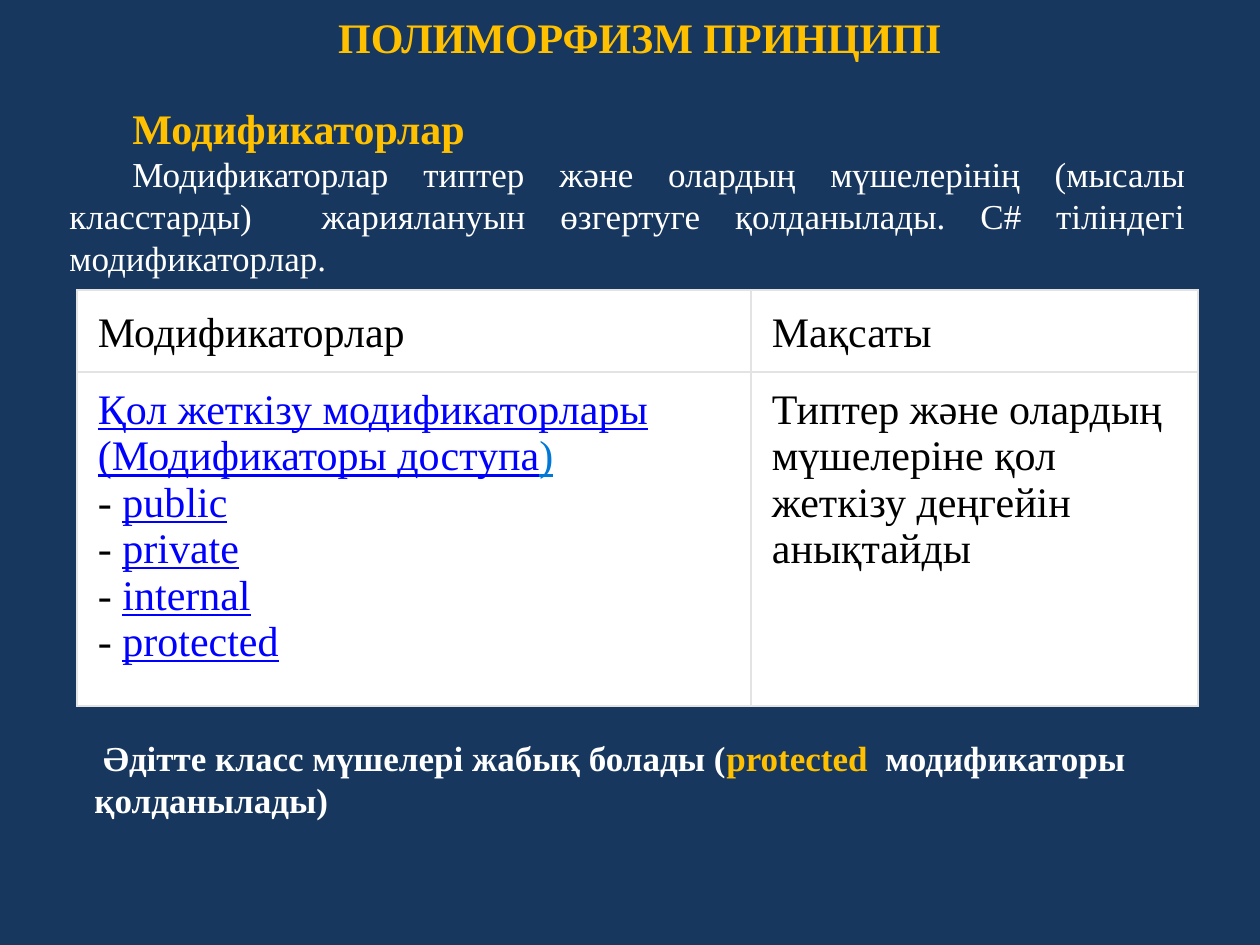
from lxml import etree
from pptx import Presentation
from pptx.dml.color import RGBColor
from pptx.enum.text import MSO_ANCHOR, MSO_AUTO_SIZE, PP_ALIGN
from pptx.oxml.ns import qn
from pptx.util import Pt

PX = 914400 // 126
FONT = "Times New Roman"
NAVY, GOLD, WHITE, BLACK = "17375E", "FFC000", "FFFFFF", "000000"
LINK, LINK_END, BORDER = "0000FF", "0078D7", "E3E3E3"
CENTER, JUSTIFY = PP_ALIGN.CENTER, PP_ALIGN.JUSTIFY
TOP, MIDDLE, BOTTOM = MSO_ANCHOR.TOP, MSO_ANCHOR.MIDDLE, MSO_ANCHOR.BOTTOM
GROW = MSO_AUTO_SIZE.SHAPE_TO_FIT_TEXT
ACCESS_MODIFIERS = ["public", "private", "internal", "protected"]


def px(length):
    """Turn whole pixels into EMU."""
    return length * PX


def rgb(hex_color):
    """Turn a hex string into a colour."""
    return RGBColor.from_string(hex_color)


def write(paragraph, text, size=24, color=BLACK, bold=False, underline=False):
    """Append one formatted run to a paragraph."""
    run = paragraph.add_run()
    run.text = text
    font = run.font
    font.name, font.size, font.bold, font.underline = FONT, Pt(size), bold, underline
    font.color.rgb = rgb(color)


def add_frame(slide, box, anchor=TOP, grow=True):
    """Add a wrapping text box and return its text frame."""
    frame = slide.shapes.add_textbox(*map(px, box)).text_frame
    frame.word_wrap = True
    frame.vertical_anchor = anchor
    if grow:
        frame.auto_size = GROW
    return frame


def add_title(slide, box):
    """Place the centred slide title."""
    title = add_frame(slide, box, anchor=MIDDLE, grow=False).paragraphs[0]
    title.alignment = CENTER
    write(title, "ПОЛИМОРФИЗМ ПРИНЦИПІ", color=GOLD, bold=True)


def add_intro(slide, box):
    """Place the section heading and its indented explanation."""
    frame = add_frame(slide, box)
    heading, explanation = frame.paragraphs[0], frame.add_paragraph()
    for paragraph in (heading, explanation):
        properties = paragraph._p.get_or_add_pPr()
        properties.set("marL", "0")
        properties.set("indent", str(px(63)))
    write(heading, "Модификаторлар", color=GOLD, bold=True)
    explanation.alignment = JUSTIFY
    write(explanation, "Модификаторлар типтер және олардың мүшелерінің (мысалы "
          "класстарды)  жариялануын өзгертуге қолданылады. C# тіліндегі "
          "модификаторлар. ", size=20, color=WHITE)


def set_border(cell, widths):
    """Draw the left, right, top and bottom cell lines in the given points."""
    properties = cell._tc.get_or_add_tcPr()
    for index, (side, width) in enumerate(zip("LRTB", widths)):
        line = etree.Element(qn(f"a:ln{side}"), w=str(Pt(width)))
        fill = etree.SubElement(line, qn("a:solidFill"))
        etree.SubElement(fill, qn("a:srgbClr"), val=BORDER)
        properties.insert(index, line)


def style_cell(cell, anchor, widths):
    """Give a cell its fill, insets, anchor and lines."""
    cell.fill.solid()
    cell.fill.fore_color.rgb = rgb(WHITE)
    cell.margin_left = cell.margin_right = px(21)
    cell.margin_top = cell.margin_bottom = px(15)
    cell.vertical_anchor = anchor
    set_border(cell, widths)


def write_access_modifiers(paragraph):
    """Write the underlined group name and its list of modifiers."""
    write(paragraph, "Қол жеткізу модификаторлары (Модификаторы доступа",
          color=LINK, underline=True)
    write(paragraph, ")", color=LINK_END, underline=True)
    for modifier in ACCESS_MODIFIERS:
        paragraph.add_line_break()
        write(paragraph, "- ")
        write(paragraph, modifier, color=LINK, underline=True)


def add_modifier_table(slide, box, columns, rows):
    """Place the table of modifiers and their purpose."""
    table = slide.shapes.add_table(len(rows), len(columns), *map(px, box)).table
    table.first_row = table.horz_banding = False
    for column, width in zip(table.columns, columns):
        column.width = px(width)
    for row, height in zip(table.rows, rows):
        row.height = px(height)
    row_styles = [(BOTTOM, (1, 1, 1, 0.75)), (TOP, (1, 1, 0.75, 1))]
    for row, (anchor, widths) in zip(table.rows, row_styles):
        for cell in row.cells:
            style_cell(cell, anchor, widths)
    name_head, purpose_head, names, purpose = [
        cell.text_frame.paragraphs[0] for cell in table.iter_cells()]
    write(name_head, "Модификаторлар")
    write(purpose_head, "Мақсаты")
    write_access_modifiers(names)
    write(purpose, "Типтер және олардың мүшелеріне қол жеткізу деңгейін анықтайды")


def add_note(slide, box):
    """Place the closing remark on protected members."""
    note = add_frame(slide, box).paragraphs[0]
    for text, color in [(" Әдітте класс мүшелері жабық болады (", WHITE),
                        ("protected  ", GOLD),
                        ("модификаторы қолданылады)", WHITE)]:
        write(note, text, size=20, color=color, bold=True)


def main():
    """Build and save the slide."""
    presentation = Presentation()
    presentation.slide_width, presentation.slide_height = px(1260), px(945)
    slide = presentation.slides.add_slide(presentation.slide_layouts[6])
    background = slide.background.fill
    background.solid()
    background.fore_color.rgb = rgb(NAVY)
    add_intro(slide, (57, 96, 1141, 190))
    add_modifier_table(slide, (77, 290, 1121, 416), columns=(674, 447), rows=(82, 334))
    add_note(slide, (82, 730, 1116, 97))
    add_title(slide, (-4, 4, 1288, 66))
    presentation.save("out.pptx")


if __name__ == "__main__":
    main()
